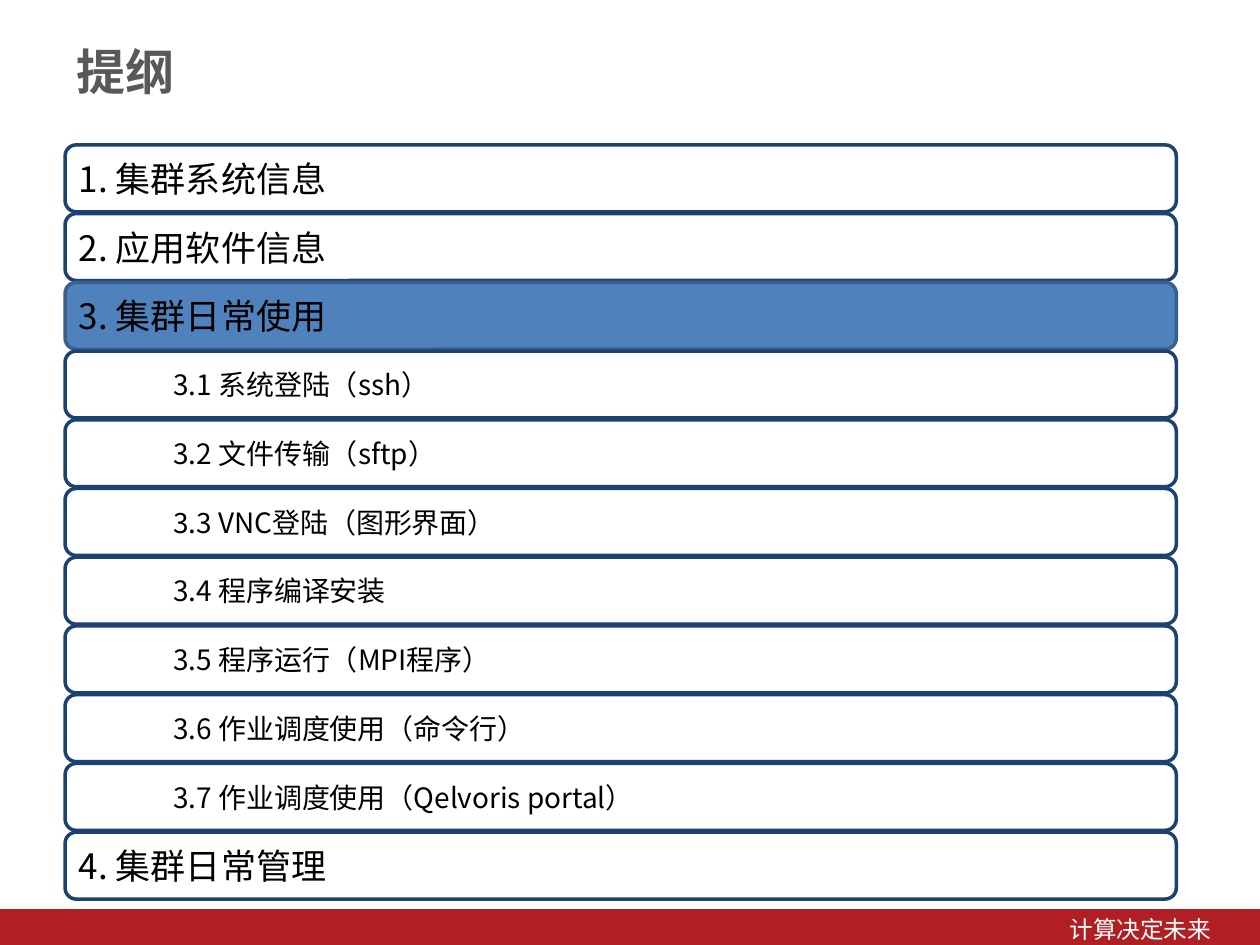
from lxml.etree import SubElement
from pptx import Presentation
from pptx.dml.color import RGBColor
from pptx.enum.shapes import MSO_SHAPE as Shape
from pptx.enum.text import MSO_ANCHOR as Anchor, PP_ALIGN as Align
from pptx.oxml.ns import qn
from pptx.util import Pt

FONT = "Noto Sans CJK SC"
COLORS = {
    "paper": "FFFFFF", "ink": "000000", "title": "595959", "footer": "B01F24",
    "border": "1C4271", "current": "4F81BD", "current_border": "3A5F8C",
}
OUTLINE = [
    ("1. 集群系统信息", 1),
    ("2. 应用软件信息", 1),
    ("3. 集群日常使用", 1),
    ("3.1 系统登陆（ssh）", 2),
    ("3.2 文件传输（sftp）", 2),
    ("3.3 VNC登陆（图形界面）", 2),
    ("3.4 程序编译安装", 2),
    ("3.5 程序运行（MPI程序）", 2),
    ("3.6 作业调度使用（命令行）", 2),
    ("3.7 作业调度使用（Qelvoris portal）", 2),
    ("4. 集群日常管理", 1),
]
CURRENT = 2


def rgb(name):
    """Return the named colour."""
    return RGBColor.from_string(COLORS[name])


def write(shape, text, size, color, align=Align.LEFT, bold=False):
    """Put one styled paragraph into a shape."""
    paragraph = shape.text_frame.paragraphs[0]
    paragraph.text = text
    paragraph.alignment = align
    font = paragraph.font
    font.name, font.size, font.bold = FONT, Pt(size), bold
    font.color.rgb = rgb(color)
    defaults = paragraph._p.pPr.find(qn("a:defRPr"))
    SubElement(defaults, qn("a:ea")).set("typeface", FONT)


def set_insets(frame, left, top, right, bottom):
    """Set the four text margins in points."""
    frame.margin_left, frame.margin_top = Pt(left), Pt(top)
    frame.margin_right, frame.margin_bottom = Pt(right), Pt(bottom)


def add_panel(slide, kind, left, top, width, height, fill):
    """Add a filled shape without shadow or outline."""
    panel = slide.shapes.add_shape(kind, Pt(left), Pt(top), Pt(width), Pt(height))
    panel.shadow.inherit = False
    panel.fill.solid()
    panel.fill.fore_color.rgb = rgb(fill)
    panel.line.fill.background()
    return panel


def add_title(slide, left, top, width, height):
    """Place the slide heading."""
    heading = slide.shapes.add_textbox(Pt(left), Pt(top), Pt(width), Pt(height))
    heading.text_frame.word_wrap = True
    write(heading, "提纲", 28, "title", bold=True)


def add_outline(slide, left, top, width, height, gap=1):
    """Stack the outline entries as equal bars and mark the current one."""
    pitch = (height + gap) / len(OUTLINE)
    for index, (entry, level) in enumerate(OUTLINE):
        current = index == CURRENT
        bar = add_panel(slide, Shape.ROUNDED_RECTANGLE, left, top + index * pitch,
                        width, pitch - gap, "current" if current else "paper")
        bar.line.color.rgb = rgb("current_border" if current else "border")
        bar.line.width = Pt(2)
        frame = bar.text_frame
        frame.word_wrap = True
        frame.vertical_anchor = Anchor.MIDDLE
        set_insets(frame, 6 if level == 1 else 60, 5, 5, 5)
        write(bar, entry, 20 if level == 1 else 16, "ink")


def add_footer(slide, left, top, width, height):
    """Draw the footer band with its right-aligned motto."""
    add_panel(slide, Shape.RECTANGLE, left, top, width, height, "footer")
    motto_width, margin = 133, 24
    motto = slide.shapes.add_textbox(Pt(left + width - margin - motto_width),
                                     Pt(top + 1.5), Pt(motto_width), Pt(height))
    motto.text_frame.word_wrap = True
    set_insets(motto.text_frame, 4, 2, 4, 2)
    write(motto, "计算决定未来", 13.5, "paper", Align.RIGHT)


def main():
    """Build and save the outline slide."""
    deck = Presentation()
    deck.slide_width, deck.slide_height = Pt(720), Pt(540)
    slide = deck.slides.add_slide(deck.slide_layouts[6])
    add_footer(slide, 0, 519.5, 720, 20.5)
    add_title(slide, 36.5, 20, 519, 45)
    add_outline(slide, 37.2, 82.8, 635, 431)
    deck.save("out.pptx")


if __name__ == "__main__":
    main()
